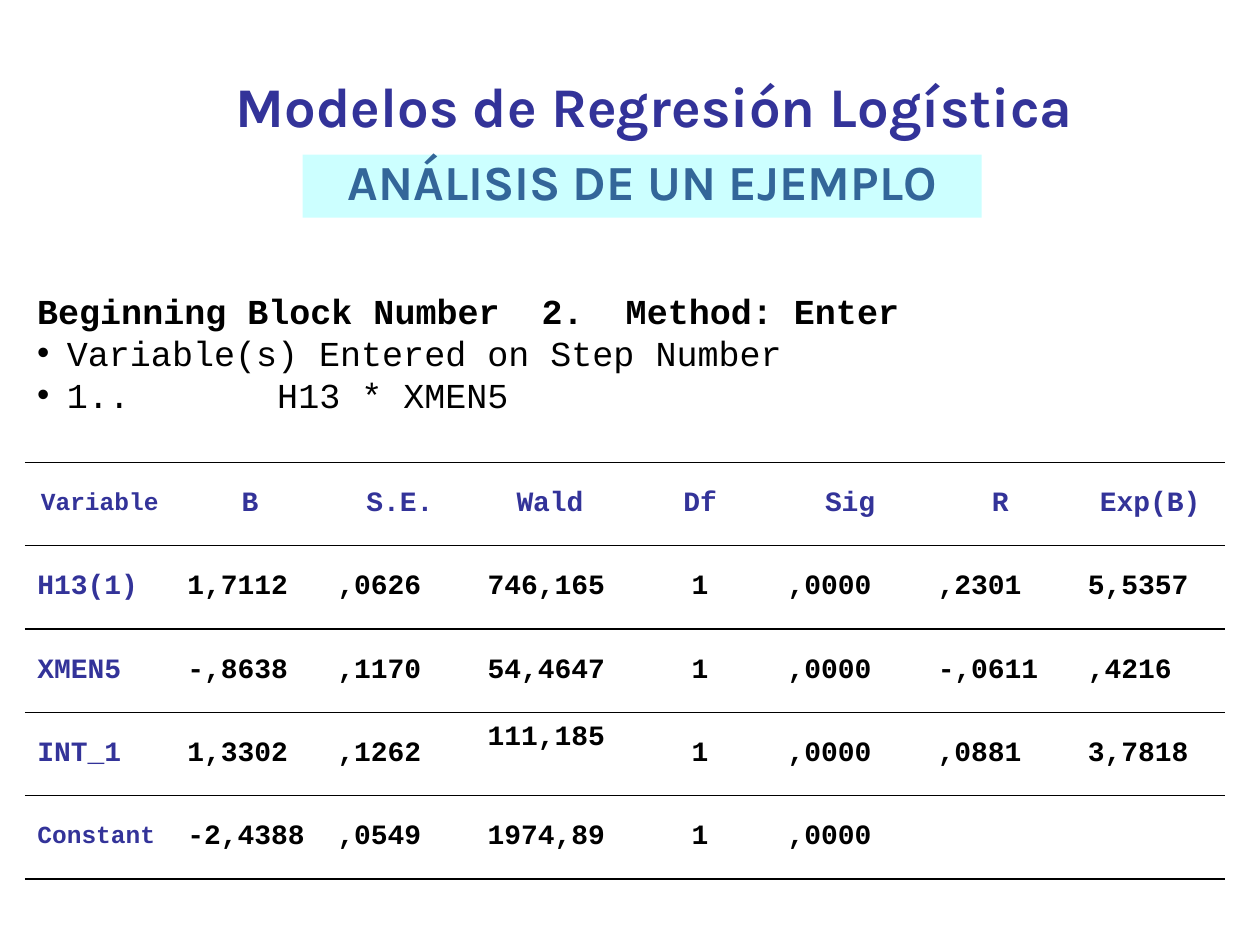
from dataclasses import dataclass

from lxml.etree import SubElement as Sub
from pptx import Presentation
from pptx.dml.color import RGBColor as RGB
from pptx.enum.shapes import MSO_SHAPE as Shape
from pptx.enum.text import MSO_ANCHOR as Anchor, MSO_AUTO_SIZE as Auto, PP_ALIGN as Align
from pptx.oxml import parse_xml
from pptx.oxml.ns import nsdecls, qn
from pptx.util import Cm, Pt


@dataclass(frozen=True)
class Theme:
    head: str = "Karla"
    mono: str = "Courier New"
    navy: RGB = RGB(0x33, 0x33, 0x99)
    steel: RGB = RGB(0x33, 0x66, 0x99)
    aqua: RGB = RGB(0xCC, 0xFF, 0xFF)
    black: RGB = RGB(0, 0, 0)
    title: Pt = Pt(32)
    sub: Pt = Pt(28)
    body: Pt = Pt(20)
    cell: Pt = Pt(16)
    small: Pt = Pt(14)


T = Theme()
NO_STYLE = "{2D5ABB26-0587-4C30-8999-92F81FD0307C}"
ROWS = [
    ["Variable", "B", "S.E.", "Wald", "Df", "Sig", "R", "Exp(B)"],
    ["H13(1)", "1,7112", ",0626", "746,165", "1", ",0000", ",2301", "5,5357"],
    ["XMEN5", "-,8638", ",1170", "54,4647", "1", ",0000", "-,0611", ",4216"],
    ["INT_1", "1,3302", ",1262", "111,185", "1", ",0000", ",0881", "3,7818"],
    ["Constant", "-2,4388", ",0549", "1974,89", "1", ",0000", "", ""],
]
LONG = ("Variable", "Constant")  # labels set smaller to fit
DF = 4  # centred column


def style(item, **vals):
    for key, val in vals.items():
        setattr(item, key, val)


def write(para, text, name, size, color, bold=True, align=Align.LEFT):
    para.alignment = align
    run = para.add_run()
    run.text = text
    style(run.font, name=name, size=size, bold=bold)
    run.font.color.rgb = color


def add_title(slide, text):
    title = slide.shapes.title
    style(title, left=Cm(4.5), top=Cm(1.32), width=Cm(18.34), height=Cm(1.6))
    frame = title.text_frame
    style(frame, word_wrap=False, auto_size=Auto.NONE, vertical_anchor=Anchor.TOP)
    write(frame.paragraphs[0], text, T.head, T.title, T.navy)


def add_band(slide, text):
    band = slide.shapes.add_shape(Shape.RECTANGLE, Cm(6.1), Cm(3.12), Cm(13.69), Cm(1.27))
    band.shadow.inherit = False
    band.fill.solid()
    band.fill.fore_color.rgb = T.aqua
    band.line.fill.background()
    frame = band.text_frame
    style(frame, word_wrap=False, vertical_anchor=Anchor.TOP)
    para = frame.paragraphs[0]
    para.line_spacing = 0.85
    write(para, text, T.head, T.sub, T.steel, align=Align.CENTER)


def add_bullet(para):
    props = para._p.get_or_add_pPr()
    props.set("marL", str(Cm(0.6)))
    props.set("indent", str(-Cm(0.6)))
    Sub(props, qn("a:buFont"), typeface="Arial")
    Sub(props, qn("a:buChar"), char="•")
    tabs = Sub(props, qn("a:tabLst"))
    Sub(tabs, qn("a:tab"), pos=str(Cm(4.84)), algn="l")


def add_notes(slide, head, items):
    box = slide.shapes.add_textbox(Cm(0.5), Cm(5.72), Cm(24), Cm(2.54))
    frame = box.text_frame
    frame.word_wrap = True
    write(frame.paragraphs[0], head, T.mono, T.body, T.black)
    for item in items:
        para = frame.add_paragraph()
        write(para, item, T.mono, T.body, T.black, bold=False)
        add_bullet(para)


def add_rules(cell):
    props = cell._tc.get_or_add_tcPr()
    for spot, side in enumerate(("lnT", "lnB")):
        props.insert(spot, parse_xml(
            f'<a:{side} {nsdecls("a")} w="{Pt(1)}"><a:solidFill>'
            f'<a:srgbClr val="{T.black}"/></a:solidFill></a:{side}>'))


def add_grid(slide, rows):
    frame = slide.shapes.add_table(len(rows), len(rows[0]), Cm(0.5), Cm(9.32), Cm(24.2), Cm(8.4))
    table = frame.table
    style(table, first_row=False, horz_banding=False)
    table._tbl.tblPr.find(qn("a:tableStyleId")).text = NO_STYLE
    for r, row in enumerate(rows):
        for c, text in enumerate(row):
            cell = table.cell(r, c)
            cell.vertical_anchor = Anchor.MIDDLE
            cell.fill.background()
            add_rules(cell)
            if text:
                write(cell.text_frame.paragraphs[0], text, T.mono,
                      T.small if text in LONG else T.cell,
                      T.black if r and c else T.navy,
                      align=Align.CENTER if r == 0 or c == DF else Align.LEFT)
    # This value sits above the middle of its row
    table.cell(3, 3).margin_bottom = Cm(0.76)


def main():
    deck = Presentation()
    style(deck, slide_width=Cm(25.4), slide_height=Cm(19.05))
    slide = deck.slides.add_slide(deck.slide_layouts[5])
    # Headings
    add_title(slide, "Modelos de Regresión Logística")
    add_band(slide, "ANÁLISIS DE UN EJEMPLO")
    # Model output
    add_grid(slide, ROWS)
    add_notes(slide, "Beginning Block Number  2.  Method: Enter",
              ["Variable(s) Entered on Step Number", "1..\tH13 * XMEN5"])
    deck.save("out.pptx")


if __name__ == "__main__":
    main()
